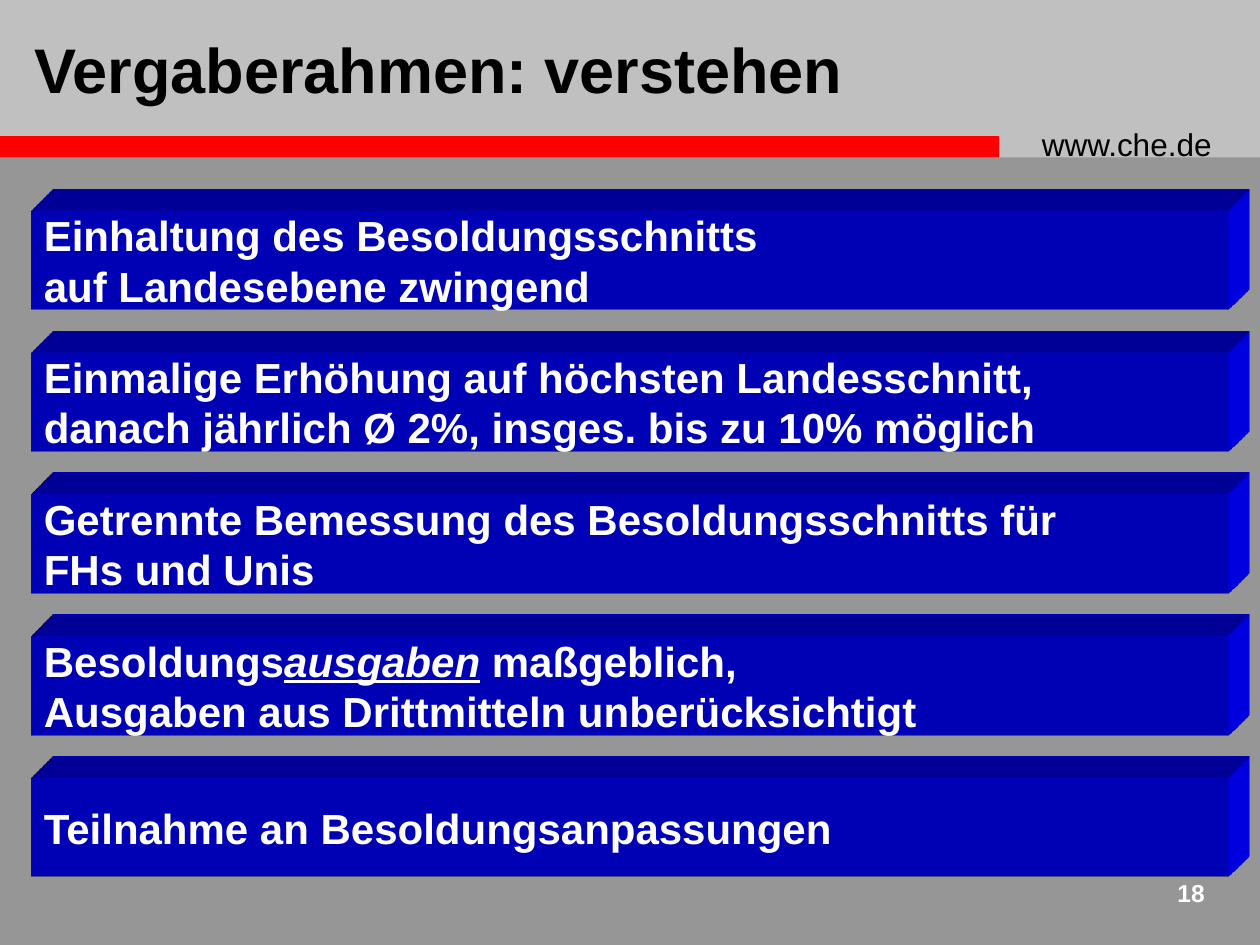
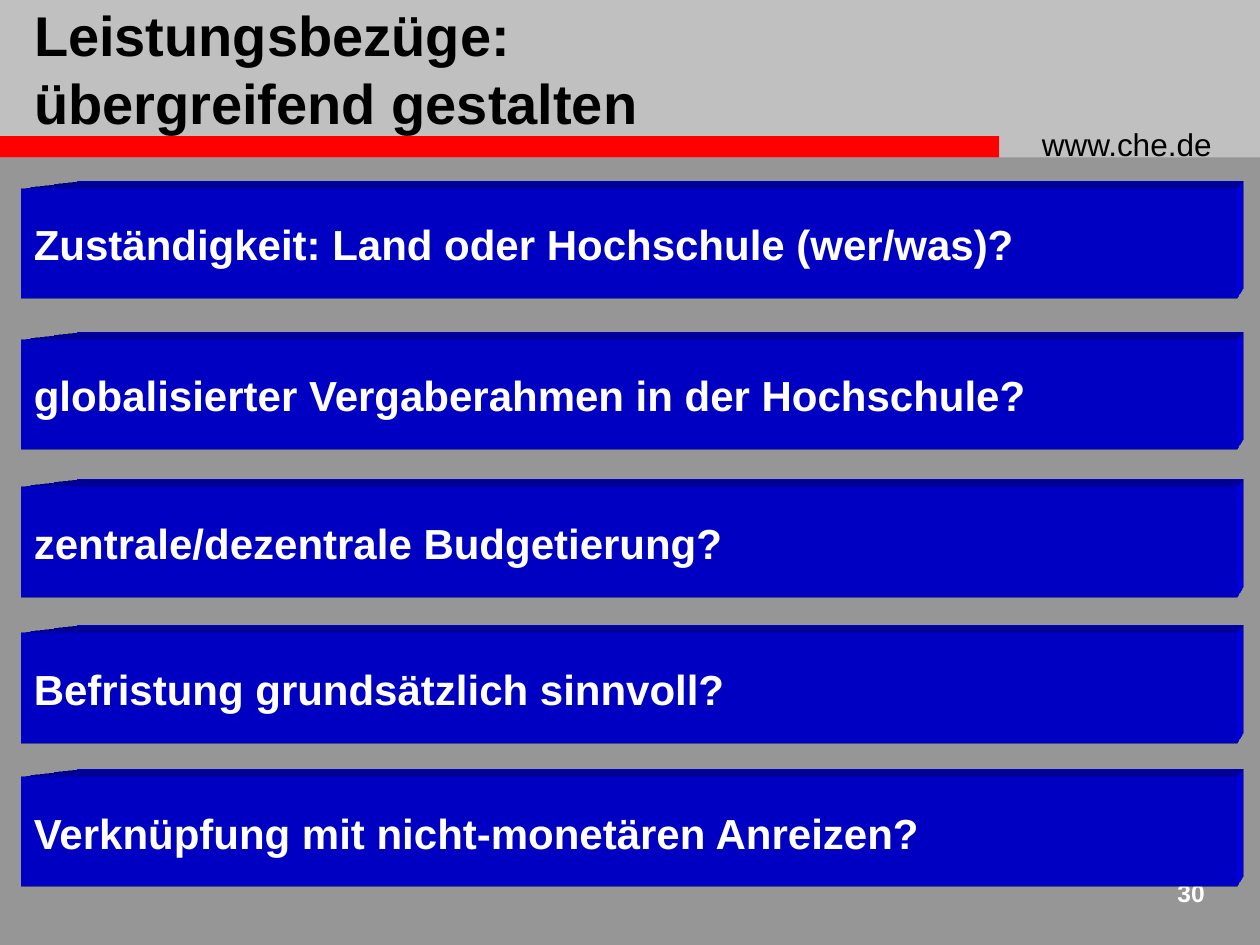
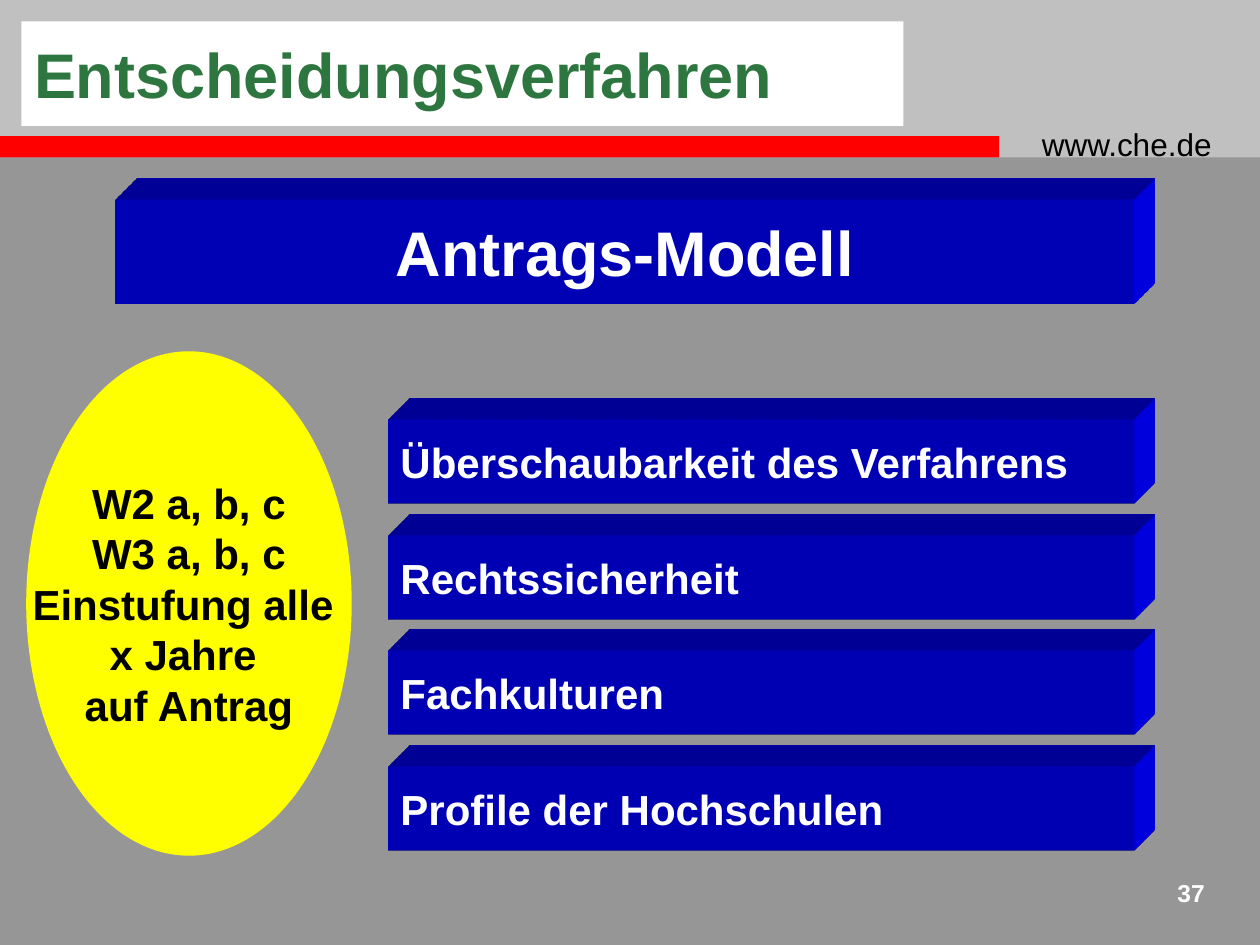
from pptx import Presentation
from pptx.dml.color import RGBColor
from pptx.enum.shapes import MSO_SHAPE as Preset
from pptx.enum.text import MSO_ANCHOR as Anchor, MSO_AUTO_SIZE as AutoSize, PP_ALIGN as Align
from pptx.oxml import parse_xml
from pptx.util import Inches, Pt

BACKGROUND = RGBColor(0x96, 0x96, 0x96)
HEADER_GREY = RGBColor(0xC0, 0xC0, 0xC0)
RED = RGBColor(0xFF, 0x00, 0x00)
BLUE = RGBColor(0x00, 0x00, 0xFF)
YELLOW = RGBColor(0xFF, 0xFF, 0x00)
GREEN = RGBColor(0x2E, 0x76, 0x3F)
WHITE = RGBColor(0xFF, 0xFF, 0xFF)
BLACK = RGBColor(0x00, 0x00, 0x00)

DRAWING = 'xmlns:a="http://schemas.openxmlformats.org/drawingml/2006/main"'
OBLIQUE = "legacyObliqueTopRight"
PERSPECTIVE = "legacyPerspectiveTopRight"


class Deck:
    font_name = "Arial"
    title_box = (0.17, 0, 8.08, 1.08)

    def __init__(self):
        self.presentation = Presentation()
        self.presentation.slide_width = Inches(10)
        self.presentation.slide_height = Inches(7.5)
        self.slide = None

    def format_font(self, font, color, **values):
        font.color.rgb = color
        for name, value in {"name": self.font_name, **values}.items():
            setattr(font, name, value)

    def fill_text(self, shape, lines, size, color, bold=True, align=Align.LEFT,
                  anchor=Anchor.MIDDLE, wrap=False):
        frame = shape.text_frame
        frame.auto_size = AutoSize.NONE
        frame.word_wrap = wrap
        frame.vertical_anchor = anchor
        for index, line in enumerate(lines):
            paragraph = frame.add_paragraph() if index else frame.paragraphs[0]
            paragraph.alignment = align
            self.format_font(paragraph.font, color, size=Pt(size), bold=bold)
            for part, text in enumerate(line.split("*")):
                run = paragraph.add_run()
                run.text = text
                emphasis = {"italic": True, "underline": True} if part % 2 else {}
                self.format_font(run.font, color, size=Pt(size), bold=bold, **emphasis)

    def add_shape(self, box, color, preset=Preset.RECTANGLE, line_width=0):
        shape = self.slide.shapes.add_shape(preset, *map(Inches, box))
        shape.shadow.inherit = False
        shape.fill.solid()
        shape.fill.fore_color.rgb = color
        if line_width:
            shape.line.color.rgb = color
            shape.line.width = Pt(line_width)
        else:
            shape.line.fill.background()
        return shape

    def add_label(self, box, text, size, color, **style):
        label = self.slide.shapes.add_textbox(*map(Inches, box))
        self.fill_text(label, [text], size, color, anchor=Anchor.TOP, wrap=True, **style)

    def add_slide(self, title_text, number, size=36, color=BLACK, box=title_box, fill=None):
        self.slide = self.presentation.slides.add_slide(self.presentation.slide_layouts[5])
        self.slide.background.fill.solid()
        self.slide.background.fill.fore_color.rgb = BACKGROUND
        self.add_shape((0, 0, 10, 1.25), HEADER_GREY)
        self.add_shape((0, 1.08, 7.93, 0.17), RED)
        self.add_label((8.17, 0.94, 1.75, 0.4), "www.che.de", 18, BLACK, bold=False)
        self.add_label((9.08, 6.92, 0.58, 0.42), str(number), 14, WHITE, align=Align.RIGHT)
        title = self.slide.shapes.title
        title.element.getparent().append(title.element)
        title.left, title.top, title.width, title.height = map(Inches, box)
        if fill is not None:
            title.fill.solid()
            title.fill.fore_color.rgb = fill
        frame = title.text_frame
        frame.text = title_text
        frame.auto_size = AutoSize.NONE
        frame.word_wrap = True
        frame.vertical_anchor = Anchor.MIDDLE
        paragraph = frame.paragraphs[0]
        paragraph.alignment = Align.LEFT
        for run in paragraph.runs:
            self.format_font(run.font, color, size=Pt(size), bold=True)

    def add_bar(self, box, lines, camera=OBLIQUE, size=24, align=Align.LEFT):
        bar = self.add_shape(box, BLUE)
        properties = bar.element.spPr
        properties.append(parse_xml(
            f'<a:scene3d {DRAWING}><a:camera prst="{camera}"/>'
            '<a:lightRig rig="legacyFlat3" dir="b"/></a:scene3d>'))
        properties.append(parse_xml(
            f'<a:sp3d {DRAWING} extrusionH="430200" prstMaterial="legacyMatte">'
            '<a:bevelT w="13500" h="13500" prst="angle"/>'
            '<a:bevelB w="13500" h="13500" prst="angle"/>'
            f'<a:extrusionClr><a:srgbClr val="{BLUE}"/></a:extrusionClr></a:sp3d>'))
        self.fill_text(bar, lines, size, WHITE, align=align)

    def add_ellipse(self, box, lines):
        ellipse = self.add_shape(box, YELLOW, Preset.OVAL, line_width=6)
        self.fill_text(ellipse, lines, 24, BLACK, align=Align.CENTER)


def build_award_framework(deck):
    deck.add_slide("Vergaberahmen: verstehen", 18)
    rules = [
        ["Einhaltung des Besoldungsschnitts", "auf Landesebene zwingend"],
        ["Einmalige Erhöhung auf höchsten Landesschnitt,",
         "danach jährlich Ø 2%, insges. bis zu 10% möglich"],
        ["Getrennte Bemessung des Besoldungsschnitts für", "FHs und Unis"],
        ["Besoldungs*ausgaben* maßgeblich,", "Ausgaben aus Drittmitteln unberücksichtigt"],
        ["Teilnahme an Besoldungsanpassungen"],
    ]
    for index, lines in enumerate(rules):
        deck.add_bar((0.25, 1.67 + index * 4.5 / 4, 9.5, 0.79), lines)


def build_performance_pay(deck):
    deck.add_slide("Leistungsbezüge: \vübergreifend gestalten", 30, size=32)
    questions = {
        1.5: "Zuständigkeit: Land oder Hochschule (wer/was)?",
        2.7: "globalisierter Vergaberahmen in der Hochschule?",
        3.87: "zentrale/dezentrale Budgetierung?",
        5.03: "Befristung grundsätzlich sinnvoll?",
        6.17: "Verknüpfung mit nicht-monetären Anreizen?",
    }
    for top, question in questions.items():
        deck.add_bar((0.17, top, 9.64, 0.87), [question], camera=PERSPECTIVE)


def build_decision_process(deck):
    deck.add_slide("Entscheidungsverfahren", 37, color=GREEN,
                   box=(0.17, 0.17, 7, 0.83), fill=WHITE)
    deck.add_bar((0.92, 1.58, 8.08, 0.83), ["Antrags-Modell"], size=36, align=Align.CENTER)
    criteria = ["Überschaubarkeit des Verfahrens", "Rechtssicherheit",
                "Fachkulturen", "Profile der Hochschulen"]
    for index, criterion in enumerate(criteria):
        deck.add_bar((3.08, 3.33 + index * 2.75 / 3, 5.92, 0.67), [criterion])
    deck.add_ellipse((0.25, 2.83, 2.5, 3.92), [
        "W2 a, b, c", "W3 a, b, c", "Einstufung alle ", "x Jahre ", "auf Antrag"])


def main():
    deck = Deck()
    build_award_framework(deck)
    build_performance_pay(deck)
    build_decision_process(deck)
    deck.presentation.save("out.pptx")


if __name__ == "__main__":
    main()
